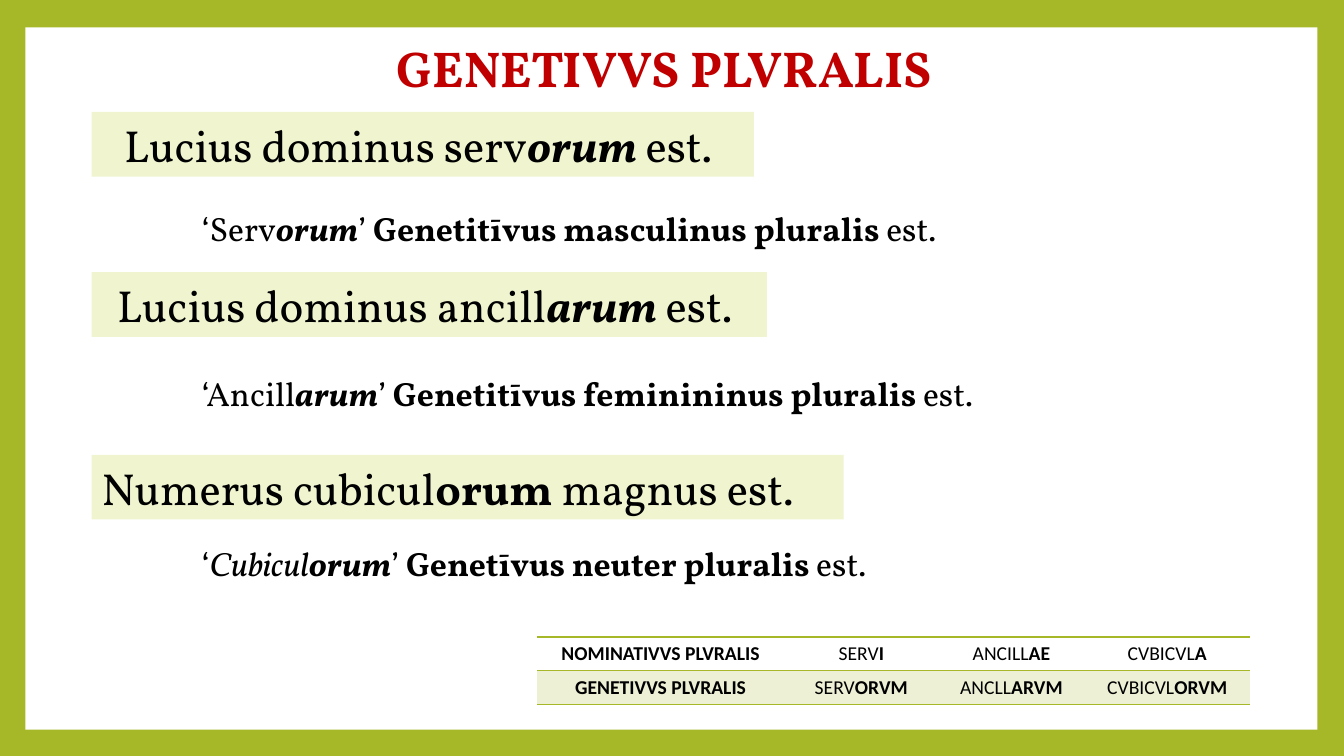
from dataclasses import dataclass

from lxml import etree
from pptx import Presentation
from pptx.dml.color import RGBColor
from pptx.enum.shapes import MSO_SHAPE
from pptx.enum.text import MSO_ANCHOR, MSO_AUTO_SIZE, PP_ALIGN
from pptx.oxml.ns import qn
from pptx.slide import Slide
from pptx.table import _Cell
from pptx.text.text import TextFrame, _Paragraph
from pptx.util import Cm, Pt

RECT = MSO_SHAPE.RECTANGLE
TOP, MIDDLE = MSO_ANCHOR.TOP, MSO_ANCHOR.MIDDLE
GROW = MSO_AUTO_SIZE.SHAPE_TO_FIT_TEXT
LEFT, CENTER = PP_ALIGN.LEFT, PP_ALIGN.CENTER
TITLE_ONLY = 5
PLAIN_TABLE = "{2D5ABB26-0587-4C30-8999-92F81FD0307C}"

Runs = list[tuple[str, str]]


@dataclass(frozen=True)
class Theme:
    green: str = "A6B727"
    pale: str = "F0F5D0"
    band: str = "EDF0D4"
    white: str = "FFFFFF"
    black: str = "000000"
    red: str = "C00000"
    serif: str = "Vollkorn"
    sans: str = "Calibri"
    title: int = 36
    example: int = 32
    note: int = 24
    cell: int = 14
    spacing: float = 1.07


@dataclass(frozen=True)
class Example:
    top: float
    width: float
    align: PP_ALIGN
    sentence: Runs
    note_top: float
    note: Runs


T = Theme()

EXAMPLES = [
    Example(2.82, 16.69, CENTER,
            [("Lucius dominus serv", ""), ("orum ", "bi"), ("est. ", "")],
            5.05,
            [("‘Serv", ""), ("orum", "bi"), ("’ ", ""),
             ("Genetitīvus masculinus pluralis ", "b"), ("est.", "")]),
    Example(6.86, 17.02, CENTER,
            [("Lucius dominus ancill", ""), ("arum ", "bi"), ("est. ", "")],
            9.19,
            [("‘Ancill", ""), ("arum", "bi"), ("’ ", ""),
             ("Genetitīvus feminininus pluralis ", "b"), ("est.", "")]),
    Example(11.46, 18.95, LEFT,
            [("Numerus cubicul", ""), ("orum ", "b"), ("magnus est.", "")],
            13.49,
            [("‘", ""), ("Cubicul", "i"), ("orum", "bi"), ("’ ", ""),
             ("Genetīvus neuter pluralis", "b"), (" est.", "")]),
]

COLUMNS = [6.22, 3.89, 3.68, 4.17]
ROW_HEIGHT = 0.85
ENDINGS = [
    [("", "NOMINATIVVS PLVRALIS"), ("SERV", "I"), ("ANCILL", "AE"), ("CVBICVL", "A")],
    [("", "GENETIVVS PLVRALIS"), ("SERV", "ORVM"), ("ANCLL", "ARVM"), ("CVBICVL", "ORVM")],
]


def rgb(color: str) -> RGBColor:
    return RGBColor.from_string(color)


def write(p: _Paragraph, runs: Runs, font: str, size: int, color: str, align: PP_ALIGN) -> None:
    p.alignment = align
    for text, style in runs:
        r = p.add_run()
        r.text = text
        r.font.name = font
        r.font.size = Pt(size)
        r.font.color.rgb = rgb(color)
        r.font.bold = "b" in style
        r.font.italic = "i" in style


def fit(tf: TextFrame, anchor: MSO_ANCHOR) -> None:
    tf.word_wrap = True
    tf.auto_size = GROW
    tf.vertical_anchor = anchor


def add_box(s: Slide, left: float, top: float, width: float, height: float, color: str):
    sp = s.shapes.add_shape(RECT, Cm(left), Cm(top), Cm(width), Cm(height))
    sp.shadow.inherit = False
    sp.fill.solid()
    sp.fill.fore_color.rgb = rgb(color)
    sp.line.fill.background()
    return sp


def add_title(s: Slide) -> None:
    sp = s.shapes.title
    sp.left, sp.top, sp.width, sp.height = Cm(9.75), Cm(0.69), Cm(15.09), Cm(1.83)
    fit(sp.text_frame, TOP)
    p = sp.text_frame.paragraphs[0]
    p.line_spacing = T.spacing
    write(p, [("GENETIVVS PLVRALIS", "b")], T.serif, T.title, T.red, LEFT)


def add_example(s: Slide, example: Example) -> None:
    sp = add_box(s, 2.31, example.top, example.width, 1.63, T.pale)
    fit(sp.text_frame, MIDDLE)
    write(sp.text_frame.paragraphs[0], example.sentence, T.serif, T.example, T.black, example.align)

    note = s.shapes.add_textbox(Cm(4.83), Cm(example.note_top), Cm(21.92), Cm(1.3))
    fit(note.text_frame, TOP)
    p = note.text_frame.paragraphs[0]
    p.line_spacing = T.spacing
    p.space_after = Pt(6)
    write(p, example.note, T.serif, T.note, T.black, LEFT)


def add_border(cell: _Cell, side: str) -> None:
    ln = etree.SubElement(cell._tc.get_or_add_tcPr(), qn(f"a:{side}"), w=str(Pt(1)))
    fill = etree.SubElement(ln, qn("a:solidFill"))
    etree.SubElement(fill, qn("a:srgbClr"), val=T.green)


def add_endings(s: Slide) -> None:
    frame = s.shapes.add_table(len(ENDINGS), len(COLUMNS), Cm(13.54), Cm(16.05),
                               Cm(sum(COLUMNS)), Cm(ROW_HEIGHT * len(ENDINGS)))
    table = frame.table
    table.first_row = table.horz_banding = False
    table._tbl.tblPr.find(qn("a:tableStyleId")).text = PLAIN_TABLE
    for column, width in zip(table.columns, COLUMNS):
        column.width = Cm(width)
    for i, words in enumerate(ENDINGS):
        table.rows[i].height = Cm(ROW_HEIGHT)
        for j, (stem, ending) in enumerate(words):
            cell = table.cell(i, j)
            add_border(cell, "lnT")
            add_border(cell, "lnB")
            if i % 2:
                cell.fill.solid()
                cell.fill.fore_color.rgb = rgb(T.band)
            else:
                cell.fill.background()
            runs = [(text, style) for text, style in ((stem, ""), (ending, "b")) if text]
            write(cell.text_frame.paragraphs[0], runs, T.sans, T.cell, T.black, CENTER)


def main() -> None:
    prs = Presentation()
    prs.slide_width, prs.slide_height = Cm(33.87), Cm(19.05)
    s = prs.slides.add_slide(prs.slide_layouts[TITLE_ONLY])
    s.background.fill.solid()
    s.background.fill.fore_color.rgb = rgb(T.green)
    panel = add_box(s, 0.64, 0.69, 32.56, 17.7, T.white)
    s.shapes.title._element.addprevious(panel._element)
    add_title(s)
    for example in EXAMPLES:
        add_example(s, example)
    add_endings(s)
    prs.save("out.pptx")


if __name__ == "__main__":
    main()
